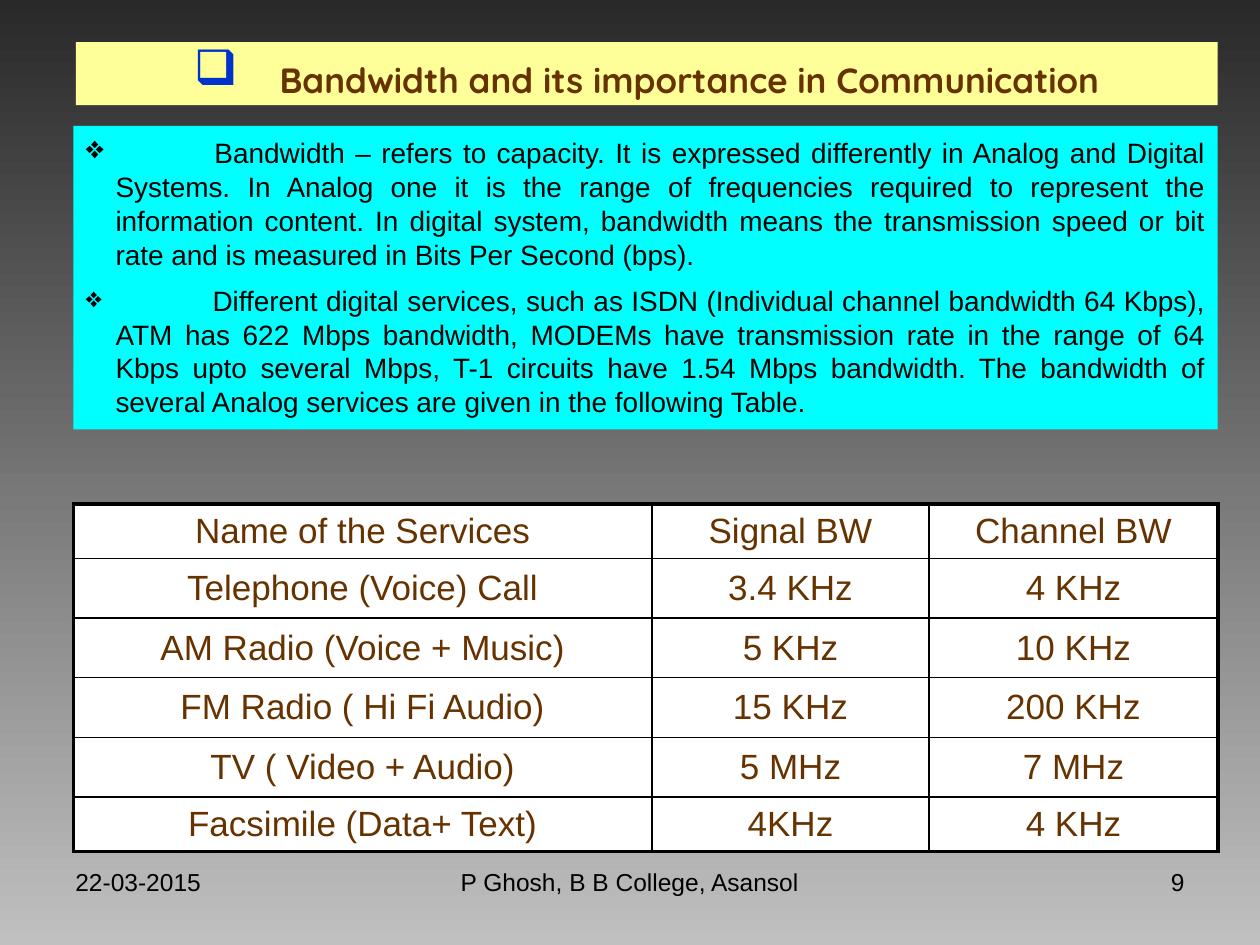
from lxml.etree import SubElement
from pptx import Presentation
from pptx.dml.color import RGBColor
from pptx.enum.shapes import MSO_SHAPE
from pptx.enum.text import MSO_ANCHOR, PP_ALIGN
from pptx.oxml.ns import qn
from pptx.util import Cm, Pt

HUES = {
    "dark": "292929", "light": "C0C0C0", "yellow": "FFFF99", "cyan": "00FFFF",
    "brown": "663300", "blue": "0033CC", "black": "000000", "white": "FFFFFF",
}
ALIGN = {"l": PP_ALIGN.LEFT, "c": PP_ALIGN.CENTER,
         "r": PP_ALIGN.RIGHT, "j": PP_ALIGN.JUSTIFY}


def hue(name):
    return RGBColor.from_string(HUES[name])


def write(para, text, size=16, color="black", font="Arial", bold=False,
          align="l", before=0, mark=None, hang=0):
    """Add a run to a paragraph and set the paragraph's format."""
    run = para.add_run()
    run.text = text
    run.font.size, run.font.name, run.font.bold = Pt(size), font, bold
    run.font.color.rgb = hue(color)
    para.alignment = ALIGN[align]
    para.space_before = Pt(before)
    props = para._p.get_or_add_pPr()
    if mark and props.find(qn("a:buChar")) is None:
        props.set("marL", str(Cm(hang)))
        props.set("indent", str(-Cm(hang)))
        props.set("defTabSz", str(Cm(2.54)))
        SubElement(props, qn("a:buFont"), typeface="OpenSymbol")
        SubElement(props, qn("a:buChar"), char=mark)


class Deck:
    def __init__(self):
        self.prs = Presentation()
        self.prs.slide_width, self.prs.slide_height = Cm(25.4), Cm(19.05)
        self.slide = self.prs.slides.add_slide(self.prs.slide_layouts[6])

    def back(self, top, base):
        fill = self.slide.background.fill
        fill.gradient()
        fill.gradient_angle = 270
        for stop, name in zip(fill.gradient_stops, (top, base)):
            stop.color.rgb = hue(name)

    def label(self, text, x, y, w, h, **style):
        box = self.slide.shapes.add_textbox(Cm(x), Cm(y), Cm(w), Cm(h))
        box.text_frame.word_wrap = True
        write(box.text_frame.paragraphs[0], text, **style)

    def panel(self, x, y, w, h, fill, anchor):
        box = self.slide.shapes.add_shape(
            MSO_SHAPE.RECTANGLE, Cm(x), Cm(y), Cm(w), Cm(h))
        box.shadow.inherit = False
        box.fill.solid()
        box.fill.fore_color.rgb = hue(fill)
        box.line.fill.background()
        box.text_frame.word_wrap = True
        box.text_frame.vertical_anchor = anchor
        return box.text_frame

    def edge(self, cell, side, width):
        line = SubElement(cell._tc.get_or_add_tcPr(), qn("a:ln" + side),
                          w=str(Pt(width)))
        fill = SubElement(line, qn("a:solidFill"))
        SubElement(fill, qn("a:srgbClr"), val=HUES["black"])

    def table(self, rows, x, y, wide, high, **style):
        last, end = len(rows) - 1, len(wide) - 1
        grid = self.slide.shapes.add_table(
            len(rows), len(wide), Cm(x), Cm(y), Cm(sum(wide)), Cm(sum(high))).table
        grid.first_row = grid.horz_banding = False
        for col, w in zip(grid.columns, wide):
            col.width = Cm(w)
        for r, row in enumerate(rows):
            grid.rows[r].height = Cm(high[r])
            for c, text in enumerate(row):
                cell = grid.cell(r, c)
                cell.vertical_anchor = MSO_ANCHOR.MIDDLE
                write(cell.text_frame.paragraphs[0], text, **style)
                # Thick outer frame, thin inner lines
                outer = {"L": c == 0, "R": c == end, "T": r == 0, "B": r == last}
                for side, thick in outer.items():
                    self.edge(cell, side, 2.25 if thick else 1)
                cell.fill.solid()
                cell.fill.fore_color.rgb = hue("white")


def main():
    deck = Deck()
    deck.back("dark", "light")

    # Footer
    foot = [("22-03-2015", 1.27, 5.92, "l"),
            ("P Ghosh, B B College, Asansol", 8.67, 8.05, "c"),
            ("9", 18.21, 5.92, "r")]
    for text, x, w, side in foot:
        deck.label(text, x, 17.35, w, 1.32, size=14, align=side)

    # Title
    head = deck.panel(1.53, 0.85, 23.02, 1.27, "yellow", MSO_ANCHOR.MIDDLE)
    style = dict(font="Quicksand", bold=True, align="c", mark="❑", hang=1.45)
    write(head.paragraphs[0], " ", size=28, color="blue", **style)
    write(head.paragraphs[0], "Bandwidth and its importance in Communication",
          size=20, color="brown", **style)

    # Services table
    rows = [("Name of the Services", "Signal BW", "Channel BW"),
            ("Telephone (Voice) Call", "3.4 KHz", "4 KHz"),
            ("AM Radio (Voice + Music)", "5 KHz", "10 KHz"),
            ("FM Radio ( Hi Fi Audio)", "15 KHz", "200 KHz"),
            ("TV ( Video + Audio)", "5 MHz", "7 MHz"),
            ("Facsimile (Data+ Text)", "4KHz", "4 KHz")]
    deck.table(rows, 1.48, 10.16, (11.66, 5.59, 5.82),
               [1.03] + [1.2] * 4 + [1.03],
               size=20, color="brown", align="c", before=2.2)

    # Explanation
    body = deck.panel(1.48, 2.54, 23.07, 6.12, "cyan", MSO_ANCHOR.TOP)
    style = dict(align="j", before=7.5, mark="❖", hang=0.6)
    first, second = body.paragraphs[0], body.add_paragraph()
    write(first, " \t", size=18, **style)
    write(first, "Bandwidth – refers to capacity. It is expressed differently in "
          "Analog and Digital Systems. In Analog one it is the range of frequencies "
          "required to represent the information content. In digital system, "
          "bandwidth means the transmission speed or bit rate and is measured in "
          "Bits Per Second (bps).", **style)
    write(second, " \tDifferent digital services, such as ISDN (Individual channel "
          "bandwidth 64 Kbps), ATM has 622 Mbps bandwidth, MODEMs have transmission "
          "rate in the range of 64 Kbps upto several Mbps, T-1 circuits have 1.54 "
          "Mbps bandwidth. The bandwidth of several Analog services are given in "
          "the following Table.", **style)

    deck.prs.save("out.pptx")


if __name__ == "__main__":
    main()
